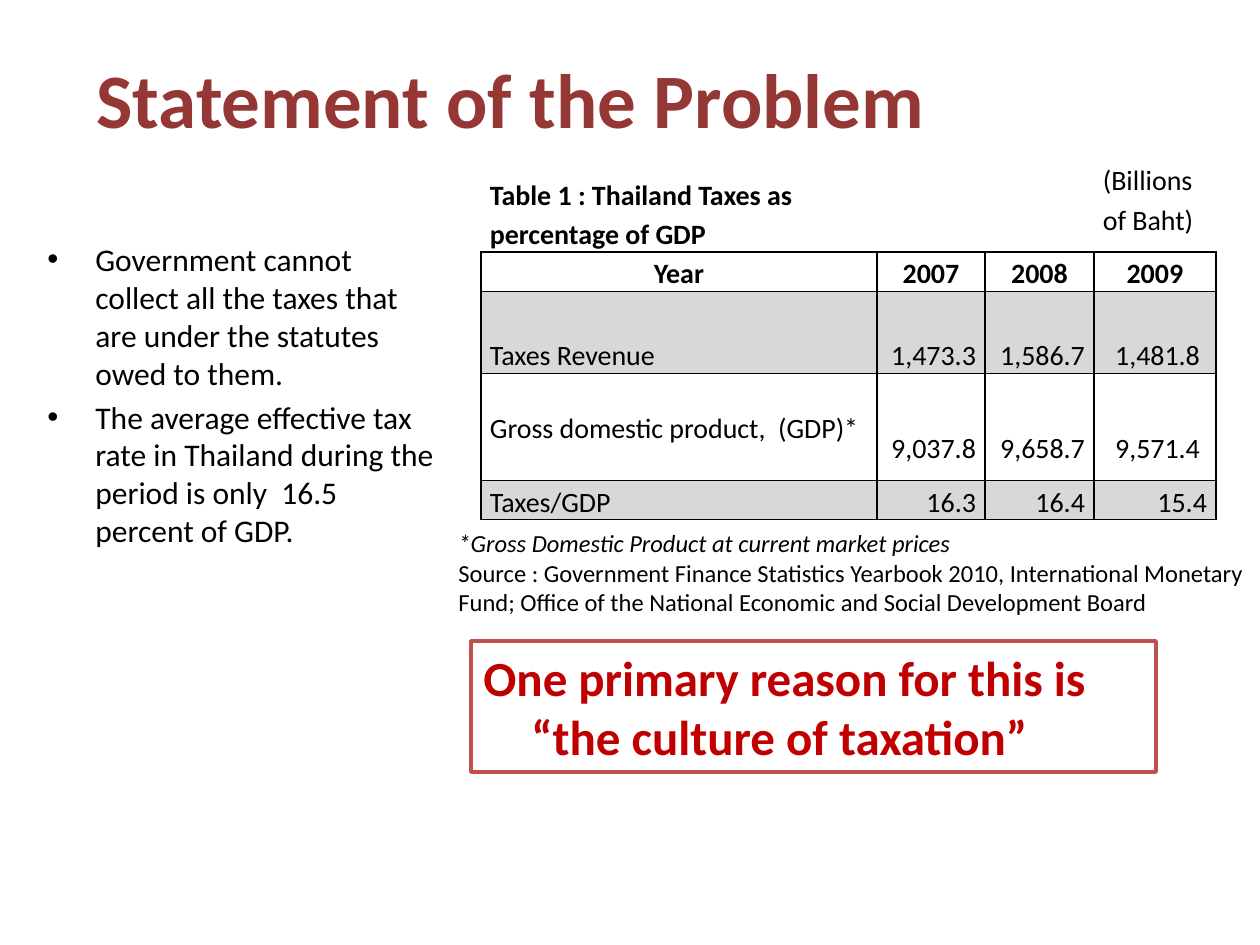
from lxml import etree
from pptx import Presentation
from pptx import util as u
from pptx.dml.color import RGBColor
from pptx.enum import shapes, text
from pptx.oxml import ns

LEFT, CENTER, RIGHT = text.PP_ALIGN.LEFT, text.PP_ALIGN.CENTER, text.PP_ALIGN.RIGHT
TOP, MIDDLE, BOTTOM = (text.MSO_ANCHOR.TOP, text.MSO_ANCHOR.MIDDLE,
                       text.MSO_ANCHOR.BOTTOM)
PX = 914400 / 126


def px(n):
    return u.Emu(round(n * PX))


def rgb(value):
    return RGBColor.from_string(value)


class Deck:
    """Holds the style and the current slide, and draws each kind of element."""

    font = "Calibri"
    black, brown, red = "000000", "953735", "C00000"
    frame, band = "C0504D", "D8D8D8"
    hang = 48

    def __init__(self):
        self.prs = Presentation()
        self.prs.slide_width, self.prs.slide_height = px(1260), px(945)
        self.s = self.prs.slides.add_slide(self.prs.slide_layouts[5])

    def run(self, p, words, size, color=black, bold=False, italic=False):
        r = p.add_run()
        r.text = words
        f = r.font
        f.name, f.size, f.bold, f.italic = self.font, u.Pt(size), bold, italic
        f.color.rgb = rgb(color)

    def paragraphs(self, tf, lines, size, color=black, bold=False, italics=(),
                   hang=0, bullet=False, before=0):
        tf.word_wrap = True
        tf.auto_size = text.MSO_AUTO_SIZE.NONE
        tf.vertical_anchor = TOP
        for i, words in enumerate(lines):
            p = tf.add_paragraph() if i else tf.paragraphs[0]
            p.alignment = LEFT
            if hang:
                pPr = p._p.get_or_add_pPr()
                pPr.set("marL", str(px(hang)))
                pPr.set("indent", str(-px(hang)))
                if bullet:
                    etree.SubElement(pPr, ns.qn("a:buFont"), typeface="Arial")
                    etree.SubElement(pPr, ns.qn("a:buChar"), char="•")
            if i and before:
                p.space_before = u.Pt(before)
            self.run(p, words, size, color, bold, i in italics)

    def title(self, box, words, size):
        sp = self.s.shapes.title
        sp.left, sp.top, sp.width, sp.height = map(px, box)
        self.paragraphs(sp.text_frame, [words], size, self.brown, bold=True)

    def textbox(self, box, lines, size, **style):
        sp = self.s.shapes.add_textbox(*map(px, box))
        self.paragraphs(sp.text_frame, lines, size, **style)

    def callout(self, box, words, size):
        sp = self.s.shapes.add_shape(shapes.MSO_SHAPE.RECTANGLE, *map(px, box))
        sp.shadow.inherit = False
        sp.fill.background()
        sp.line.color.rgb = rgb(self.frame)
        sp.line.width = u.Pt(2)
        self.paragraphs(sp.text_frame, [words], size, self.red, bold=True,
                        hang=self.hang)

    def borders(self, cell, sides):
        tcPr = cell._tc.get_or_add_tcPr()
        for side in "LRTB":
            ln = etree.SubElement(tcPr, ns.qn("a:ln" + side), w=str(u.Pt(1)))
            if side in sides:
                fill = etree.SubElement(ln, ns.qn("a:solidFill"))
                etree.SubElement(fill, ns.qn("a:srgbClr"), val=self.black)
            else:
                etree.SubElement(ln, ns.qn("a:noFill"))

    def cell(self, cell, words, size, align, anchor, bold, fill, sides, top=0, right=9):
        cell.margin_left, cell.margin_right = px(9), px(right)
        cell.margin_top, cell.margin_bottom = px(top), 0
        cell.vertical_anchor = anchor
        self.borders(cell, sides)
        if fill:
            cell.fill.solid()
            cell.fill.fore_color.rgb = rgb(fill)
        else:
            cell.fill.background()
        if words:
            p = cell.text_frame.paragraphs[0]
            p.alignment, p.line_spacing = align, 1.15
            self.run(p, words, size, bold=bold)

    def table(self, left, top, widths, heights, rows, size):
        t = self.s.shapes.add_table(len(rows), len(widths), px(left), px(top),
                                    px(sum(widths)), px(sum(heights))).table
        t.first_row = t.horz_banding = False
        for column, width in zip(t.columns, widths):
            column.width = px(width)
        for i, (row, height) in enumerate(zip(rows, heights)):
            t.rows[i].height = px(height)
            for j, words in enumerate(row):
                caption, header, gdp = i == 0, i == 1, i == 3
                align = CENTER if header else RIGHT if j and not caption else LEFT
                middle = gdp or (j and (caption or header))
                self.cell(t.cell(i, j), words, size, align,
                          MIDDLE if middle else BOTTOM,
                          bold=header or (caption and j == 0),
                          fill=self.band if i in (2, 4) else None,
                          sides="B" if caption else "LRTB",
                          top=39 if gdp and j else 0,
                          right=16 if j == 3 and i in (2, 3) else 9)


def main():
    deck = Deck()
    deck.textbox((35, 234, 417, 367), [
        "Government cannot collect all the taxes that are under the statutes owed to them.",
        "The average effective tax rate in Thailand during the period is only  16.5 "
        "percent of GDP.",
    ], 18, hang=deck.hang, bullet=True, before=3.6)
    deck.title((84, 45, 919, 199), "Statement of the Problem", 44)
    deck.table(481, 145, [396, 108, 109, 122], [107, 39, 82, 107, 39], [
        ["Table 1 : Thailand Taxes as percentage of GDP", "", "", "(Billions of Baht)"],
        ["Year", "2007", "2008", "2009"],
        ["Taxes Revenue", "1,473.3", "1,586.7", "1,481.8"],
        ["Gross domestic product,  (GDP)*", "9,037.8", "9,658.7", "9,571.4"],
        ["Taxes/GDP", "16.3", "16.4", "15.4"],
    ], 16)
    deck.textbox((446, 522, 814, 102), [
        "*Gross Domestic Product at current market prices",
        "Source : Government Finance Statistics Yearbook 2010, International Monetary "
        "Fund; Office of the National Economic and Social Development Board",
    ], 14, italics=(0,))
    deck.callout((471, 641, 685, 131),
                 "One primary reason for this is “the culture of taxation”", 28)
    deck.prs.save("out.pptx")


if __name__ == "__main__":
    main()
